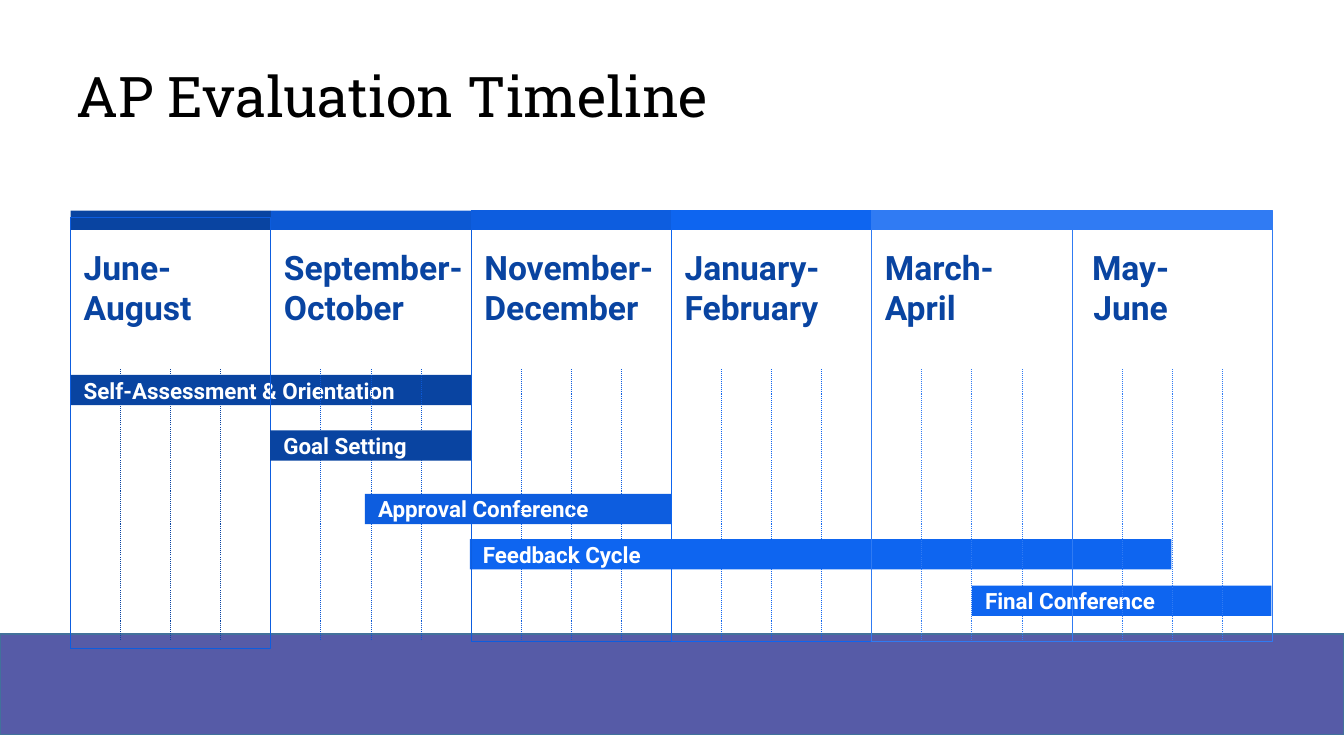
import pptx
import pptx.util
import pptx.dml.color
import pptx.enum.dml
import pptx.enum.shapes
import pptx.enum.text
import pptx.oxml.ns
import lxml.etree

Inches = pptx.util.Inches
Pt = pptx.util.Pt
RGBColor = pptx.dml.color.RGBColor
ALIGN = pptx.enum.text.PP_ALIGN

# Colours
NAVY = RGBColor(0x09, 0x44, 0xA1)
ROYAL = RGBColor(0x0C, 0x58, 0xD3)
BLUE = RGBColor(0x0D, 0x5D, 0xDF)
BRIGHT = RGBColor(0x0E, 0x65, 0xF0)
SKY = RGBColor(0x30, 0x7B, 0xF3)
PURPLE = RGBColor(0x56, 0x5B, 0xA7)
STEEL = RGBColor(0x42, 0x71, 0x9B)
WHITE = RGBColor(0xFF, 0xFF, 0xFF)
BLACK = RGBColor(0x00, 0x00, 0x00)

# Content
TITLE = "AP Evaluation Timeline"

# Label lines, label width, alignment, colour, frame top (None: no frame),
# and the bars that start there: text, left, top, width, colour
PERIODS = [
    (["June-", "August"], 1.58, ALIGN.LEFT, NAVY, 2.16,
     [("Self-Assessment & Orientation", 0.7, 3.72, 3.97, NAVY)]),
    (["September- October"], 2.12, ALIGN.LEFT, ROYAL, None,
     [("Goal Setting", 2.68, 4.27, 1.99, NAVY),
      ("Approval Conference", 3.62, 4.9, 3.04, BLUE)]),
    (["November-", "December"], 1.99, ALIGN.LEFT, BLUE, 2.09,
     [("Feedback Cycle", 4.66, 5.35, 6.96, BRIGHT)]),
    (["January-", "February"], 1.99, ALIGN.LEFT, BRIGHT, 2.09, []),
    (["March-", "April"], 1.74, ALIGN.LEFT, SKY, 2.09,
     [("Final Conference", 9.64, 5.81, 2.97, BRIGHT)]),
    (["May-June"], 1.16, ALIGN.CENTER, SKY, 2.09, []),
]

# Grid, in inches
GRID_LEFT, GRID_RIGHT = 0.7, 12.62
COLUMN_WIDTH = (GRID_RIGHT - GRID_LEFT) / len(PERIODS)
HEADER_TOP, HEADER_HEIGHT = 2.09, 0.19
LABEL_TOP, LABEL_HEIGHT = 2.27, 1.16
DOTS_TOP, DOTS_BOTTOM = 3.66, 6.35
FRAME_HEIGHT = 4.27
BAR_HEIGHT = 0.3
WEEK_LINES = 3

presentation = pptx.Presentation()
presentation.slide_width = Inches(13.33)
presentation.slide_height = Inches(7.5)
slide = presentation.slides.add_slide(presentation.slide_layouts[6])


def write_text(shape, lines, size=24, font="Roboto", color=NAVY, bold=True,
               align=ALIGN.LEFT, inset=(0.13, 0.13), spacing=None):
    frame = shape.text_frame
    frame.word_wrap = True
    frame.vertical_anchor = pptx.enum.text.MSO_ANCHOR.MIDDLE
    frame.margin_left = frame.margin_right = Inches(inset[0])
    frame.margin_top = frame.margin_bottom = Inches(inset[1])
    for index, line in enumerate(lines):
        paragraph = frame.paragraphs[0] if index == 0 else frame.add_paragraph()
        paragraph.alignment = align
        paragraph.line_spacing = spacing
        run = paragraph.add_run()
        run.text = line
        run.font.size = Pt(size)
        run.font.name = font
        run.font.bold = bold
        run.font.color.rgb = color


def add_text(left, top, width, height, lines, **text_format):
    box = slide.shapes.add_textbox(Inches(left), Inches(top), Inches(width), Inches(height))
    write_text(box, lines, **text_format)


def add_rectangle(left, top, width, height, fill=None, line=None, line_width=0.75):
    shape = slide.shapes.add_shape(
        pptx.enum.shapes.MSO_SHAPE.RECTANGLE,
        Inches(left), Inches(top), Inches(width), Inches(height))
    shape.shadow.inherit = False
    if fill is None:
        shape.fill.background()
    else:
        shape.fill.solid()
        shape.fill.fore_color.rgb = fill
    if line is None:
        shape.line.fill.background()
    else:
        shape.line.color.rgb = line
        shape.line.width = Pt(line_width)
    return shape


def add_dotted_line(x, color):
    connector = slide.shapes.add_connector(
        pptx.enum.shapes.MSO_CONNECTOR.STRAIGHT,
        Inches(x), Inches(DOTS_BOTTOM), Inches(x), Inches(DOTS_TOP))
    connector.line.color.rgb = color
    connector.line.width = Pt(0.75)
    connector.line.dash_style = pptx.enum.dml.MSO_LINE.ROUND_DOT
    properties = connector._element.spPr
    lxml.etree.SubElement(properties, pptx.oxml.ns.qn("a:effectLst"))


# Footer band and title
add_rectangle(0, 6.29, 13.33, 1, fill=PURPLE, line=STEEL, line_width=1)
add_text(0.66, 0.34, 12, 1.3, [TITLE], size=40, font="Roboto Slab", color=BLACK,
         bold=False, inset=(0.1, 0.05), spacing=0.9)

# Periods with their week lines, bars and frames
for number, (label, label_width, align, color, frame_top, bars) in enumerate(PERIODS):
    left = GRID_LEFT + number * COLUMN_WIDTH
    add_rectangle(left, HEADER_TOP, COLUMN_WIDTH, HEADER_HEIGHT, fill=color)
    for week in range(1, WEEK_LINES + 1):
        add_dotted_line(left + week * COLUMN_WIDTH / (WEEK_LINES + 1), color)
    add_text(left, LABEL_TOP, label_width, LABEL_HEIGHT, label, align=align)
    for text, bar_left, bar_top, bar_width, bar_color in bars:
        bar = add_rectangle(bar_left, bar_top, bar_width, BAR_HEIGHT, fill=bar_color)
        write_text(bar, [text], size=16, color=WHITE)
    if frame_top is not None:
        add_rectangle(left, frame_top, COLUMN_WIDTH, FRAME_HEIGHT, line=color if number else BLUE)

presentation.save("out.pptx")
